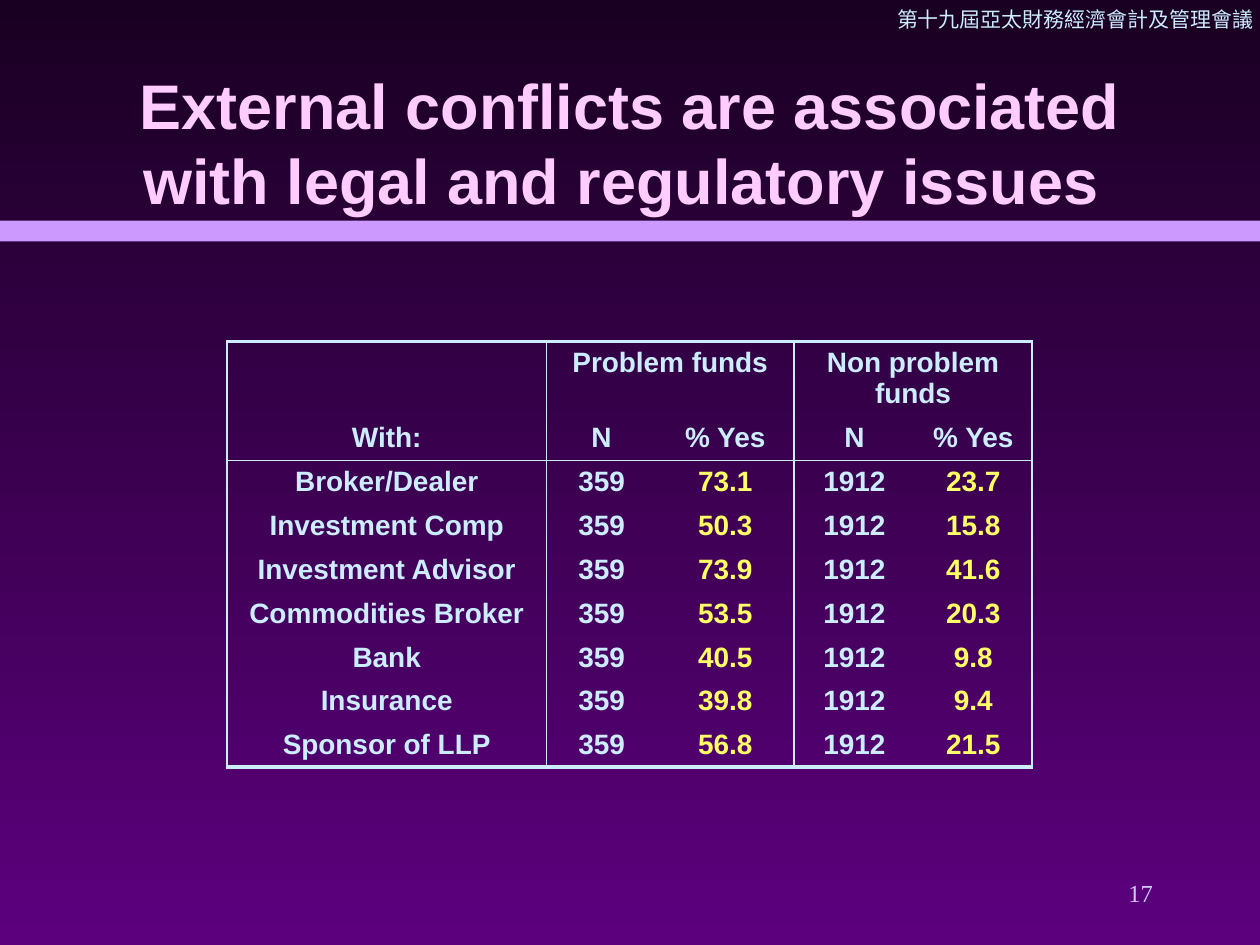
from lxml.etree import SubElement
from pptx import Presentation
from pptx.dml.color import RGBColor
from pptx.enum.shapes import MSO_SHAPE
from pptx.enum.text import MSO_ANCHOR, MSO_AUTO_SIZE, PP_ALIGN
from pptx.oxml import parse_xml
from pptx.oxml.ns import nsdecls, qn
from pptx.util import Pt

COLOURS = {
    "top": "190022",
    "bottom": "5D007E",
    "band": "CC99FF",
    "title": "FFCCFF",
    "text": "CCECFF",
    "number": "CCCCFF",
    "highlight": "FFFF66",
}
COLUMN_WIDTHS = [182.5, 63, 78.5, 69, 67]
HEADER_HEIGHT, ROW_HEIGHT = 43, 25
VERTICAL_RULES = {0: 1, 1: 1, 3: 1, 5: 1}
HORIZONTAL_RULES = {0: 2.25, 2: 1, 9: 2.25}
HANGING_INDENT = Pt(27)
ROWS = [
    ["", "Problem funds", "", "Non problem\nfunds", ""],
    ["With:", "N", "% Yes", "N", "% Yes"],
    ["Broker/Dealer", "359", "73.1", "1912", "23.7"],
    ["Investment Comp", "359", "50.3", "1912", "15.8"],
    ["Investment Advisor", "359", "73.9", "1912", "41.6"],
    ["Commodities Broker", "359", "53.5", "1912", "20.3"],
    ["Bank", "359", "40.5", "1912", "9.8"],
    ["Insurance", "359", "39.8", "1912", "9.4"],
    ["Sponsor of LLP", "359", "56.8", "1912", "21.5"],
]


def colour(name):
    return RGBColor.from_string(COLOURS[name])


def add_span(para, text, size, font, colour_name, bold=False):
    span = para.add_run()
    span.text = text
    span.font.size = Pt(size)
    span.font.name = font
    span.font.bold = bold
    span.font.color.rgb = colour(colour_name)


def paint_background(page):
    fill = page.background.fill
    fill.gradient()
    fill.gradient_angle = 270
    for stop, name in zip(fill.gradient_stops, ("top", "bottom")):
        stop.color.rgb = colour(name)
    fill.gradient_stops[0].position = 0
    fill.gradient_stops[1].position = 1


def add_band(page):
    band = page.shapes.add_shape(MSO_SHAPE.RECTANGLE, Pt(0), Pt(126), Pt(720), Pt(12))
    band.shadow.inherit = False
    band.fill.solid()
    band.fill.fore_color.rgb = colour("band")
    band.line.fill.background()


def add_title(page, text):
    title = page.shapes.title
    title.left, title.top, title.width, title.height = Pt(54), Pt(36), Pt(612), Pt(90)
    frame = title.text_frame
    frame.auto_size = MSO_AUTO_SIZE.NONE
    frame.vertical_anchor = MSO_ANCHOR.MIDDLE
    para = frame.paragraphs[0]
    para.alignment = PP_ALIGN.CENTER
    add_span(para, text, 36, "Arial", "title", True)


def add_label(page, place, text, size, colour_name, alignment, anchor, right_inset):
    box = page.shapes.add_textbox(*(Pt(length) for length in place))
    frame = box.text_frame
    frame.word_wrap = False
    frame.vertical_anchor = anchor
    frame.margin_right = Pt(right_inset)
    para = frame.paragraphs[0]
    para.alignment = alignment
    add_span(para, text, size, "Times New Roman", colour_name)


def write_cell(cell, text, colour_name):
    frame = cell.text_frame
    for index, line in enumerate(text.split("\n")):
        para = frame.paragraphs[0] if index == 0 else frame.add_paragraph()
        para.alignment = PP_ALIGN.CENTER
        para.line_spacing = Pt(17.8)
        properties = para._p.get_or_add_pPr()
        properties.set("marL", str(HANGING_INDENT))
        properties.set("indent", str(-HANGING_INDENT))
        if line:
            add_span(para, line, 16, "Arial", colour_name, True)


def set_borders(cell, row, column):
    properties = cell._tc.get_or_add_tcPr()
    widths = [
        ("lnL", VERTICAL_RULES.get(column)),
        ("lnR", VERTICAL_RULES.get(column + cell.span_width)),
        ("lnT", HORIZONTAL_RULES.get(row)),
        ("lnB", HORIZONTAL_RULES.get(row + 1)),
    ]
    for position, (tag, width) in enumerate(widths):
        border = parse_xml(f"<a:{tag} {nsdecls('a')}/>")
        if width:
            border.set("w", str(Pt(width)))
            fill = SubElement(border, qn("a:solidFill"))
            SubElement(fill, qn("a:srgbClr")).set("val", COLOURS["text"])
        else:
            SubElement(border, qn("a:noFill"))
        properties.insert(position, border)


def add_conflict_table(page):
    height = HEADER_HEIGHT + ROW_HEIGHT * (len(ROWS) - 1)
    frame = page.shapes.add_table(
        len(ROWS), len(COLUMN_WIDTHS), Pt(129.75), Pt(195), Pt(sum(COLUMN_WIDTHS)), Pt(height)
    )
    table = frame.table
    table.first_row = False
    table.horz_banding = False
    for column, width in zip(table.columns, COLUMN_WIDTHS):
        column.width = Pt(width)
    for index, row in enumerate(table.rows):
        row.height = Pt(ROW_HEIGHT if index else HEADER_HEIGHT)
    for start in (1, 3):
        table.cell(0, start).merge(table.cell(0, start + 1))
    for row, texts in enumerate(ROWS):
        for column, text in enumerate(texts):
            cell = table.cell(row, column)
            cell.fill.background()
            highlighted = row > 1 and column in (2, 4)
            write_cell(cell, text, "highlight" if highlighted else "text")
            set_borders(cell, row, column)


def main():
    deck = Presentation()
    deck.slide_width, deck.slide_height = Pt(720), Pt(540)
    page = deck.slides.add_slide(deck.slide_layouts[5])
    paint_background(page)
    add_band(page)
    add_label(page, (505.5, 0, 214.5, 21.6), "第十九屆亞太財務經濟會計及管理會議", 12,
              "text", PP_ALIGN.LEFT, MSO_ANCHOR.TOP, 0)
    add_title(page, "External conflicts are associated with legal and regulatory issues ")
    add_conflict_table(page)
    add_label(page, (516, 492, 150, 36), "17", 14,
              "number", PP_ALIGN.RIGHT, MSO_ANCHOR.MIDDLE, 7.2)
    deck.save("out.pptx")


if __name__ == "__main__":
    main()
